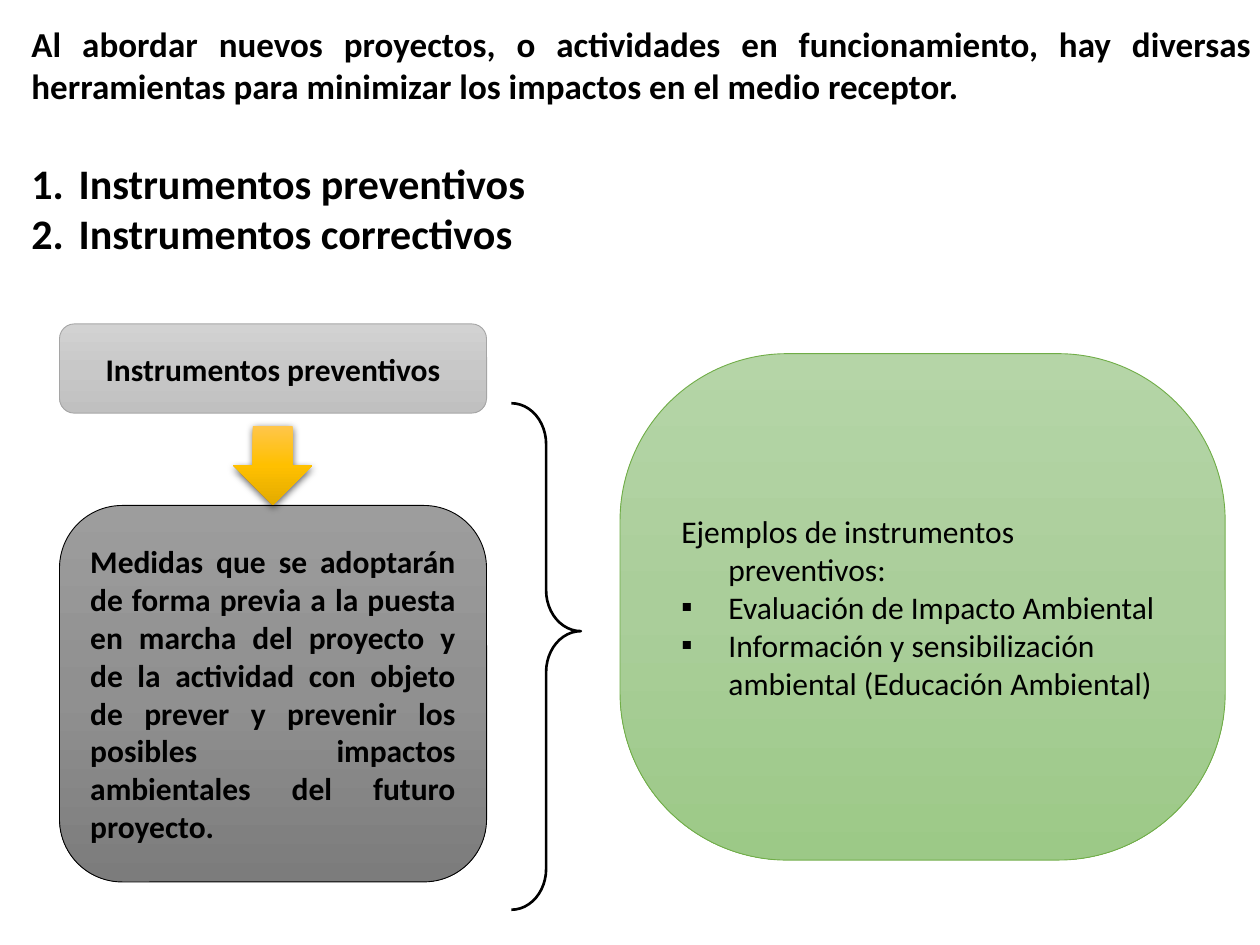
from copy import deepcopy
from dataclasses import dataclass

from lxml import etree
from pptx import Presentation
from pptx.dml.color import RGBColor
from pptx.enum.shapes import MSO_SHAPE
from pptx.enum.text import MSO_ANCHOR, MSO_AUTO_SIZE, PP_ALIGN
from pptx.oxml.ns import qn
from pptx.util import Cm, Pt

ROUNDED, ARROW, BRACE = MSO_SHAPE.ROUNDED_RECTANGLE, MSO_SHAPE.DOWN_ARROW, MSO_SHAPE.RIGHT_BRACE
TOP, MIDDLE = MSO_ANCHOR.TOP, MSO_ANCHOR.MIDDLE
LEFT, CENTER, JUSTIFY = PP_ALIGN.LEFT, PP_ALIGN.CENTER, PP_ALIGN.JUSTIFY
FONT, BLACK = "Calibri", "000000"
INDENT = Cm(0.95)
NUMBER = ("a:buAutoNum", {"type": "arabicPeriod"})
SQUARE = ("a:buChar", {"char": "▪"})


@dataclass
class Block:
    """A preset shape with its place in centimetres."""
    kind: int
    left: float
    top: float
    width: float
    height: float
    stops: tuple = ()
    line: str = ""
    weight: float = 0.5
    adjustments: tuple = ()


def rgb(value: str) -> RGBColor:
    return RGBColor.from_string(value)


def place(sp, left: float, top: float, width: float, height: float) -> None:
    sp.left, sp.top, sp.width, sp.height = Cm(left), Cm(top), Cm(width), Cm(height)


def write(sp, text: str, size: int, align, anchor, bold: bool = True) -> None:
    tf = sp.text_frame
    tf.text = text
    tf.word_wrap = True
    tf.auto_size = MSO_AUTO_SIZE.NONE
    tf.vertical_anchor = anchor
    for p in tf.paragraphs:
        p.alignment = align
        p.space_before = Pt(0)
        for r in p.runs:
            r.font.name, r.font.size, r.font.bold = FONT, Pt(size), bold
            r.font.color.rgb = rgb(BLACK)


def hang(p, bullet: tuple = ()) -> None:
    """Give a paragraph a hanging indent and, if asked, a bullet."""
    pPr = p._p.get_or_add_pPr()
    pPr.set("marL", str(INDENT))
    pPr.set("indent", str(-INDENT))
    if bullet:
        tag, attributes = bullet
        etree.SubElement(pPr, qn("a:buFont"), typeface=FONT)
        etree.SubElement(pPr, qn(tag), attributes)


def fill_gradient(sp, colors: tuple) -> None:
    """Evenly spaced stops running from top to bottom."""
    sp.fill.gradient()
    sp.fill.gradient_angle = 270
    gs_list = sp._element.spPr.find(qn("a:gradFill")).find(qn("a:gsLst"))
    while len(gs_list) < len(colors):
        gs_list.append(deepcopy(gs_list[0]))
    for i, (stop, color) in enumerate(zip(sp.fill.gradient_stops, colors)):
        stop.position = i / (len(colors) - 1)
        stop.color.rgb = rgb(color)


def add_block(s, b: Block):
    sp = s.shapes.add_shape(b.kind, Cm(b.left), Cm(b.top), Cm(b.width), Cm(b.height))
    for i, value in enumerate(b.adjustments):
        sp.adjustments[i] = value
    if b.stops:
        fill_gradient(sp, b.stops)
    else:
        sp.fill.background()
    if b.line:
        sp.line.color.rgb = rgb(b.line)
        sp.line.width = Pt(b.weight)
    else:
        sp.line.fill.background()
    sp.shadow.inherit = False
    return sp


def add_shadow(sp) -> None:
    effects = sp._element.spPr.find(qn("a:effectLst"))
    shadow = etree.SubElement(effects, qn("a:outerShdw"), blurRad=str(Pt(4.5)),
                              dist=str(Pt(1.5)), dir="5400000", rotWithShape="0")
    color = etree.SubElement(shadow, qn("a:srgbClr"), val=BLACK)
    etree.SubElement(color, qn("a:alpha"), val="63000")


HEADING = Block(ROUNDED, 1.2, 6.53, 8.61, 1.8, ("D2D2D2", "C8C8C8", "C0C0C0"), "A5A5A5")
DEFINITION = Block(ROUNDED, 1.2, 10.19, 8.61, 7.59, ("9D9D9D", "909090", "7C7C7C"), BLACK)
EXAMPLES = Block(ROUNDED, 12.5, 7.13, 12.2, 10.21, ("B5D5A7", "AACE9A", "9CC987"), "70AD47",
                 adjustments=(0.33,))
DOWN = Block(ARROW, 4.7, 8.58, 1.6, 1.6, ("FFC64B", "FFC000", "E3AB00"))
BRACKET = Block(BRACE, 10.31, 8.13, 1.4, 10.21, line=BLACK, weight=1.5,
                adjustments=(0.59, 0.45))


def main() -> None:
    prs = Presentation()
    prs.slide_width, prs.slide_height = Cm(25.4), Cm(19.05)
    s = prs.slides.add_slide(prs.slide_layouts[1])

    # Introduction and numbered list
    title, body = s.shapes.title, s.placeholders[1]
    place(title, 0.38, 0.33, 25.1, 2)
    write(title, "Al abordar nuevos proyectos, o actividades en funcionamiento, hay diversas "
          "herramientas para minimizar los impactos en el medio receptor.", 20, JUSTIFY, TOP)
    place(body, 0.38, 3.04, 25.1, 2.4)
    write(body, "Instrumentos preventivos\nInstrumentos correctivos", 24, JUSTIFY, TOP)
    for p in body.text_frame.paragraphs:
        hang(p, NUMBER)

    # Definition column
    write(add_block(s, HEADING), "Instrumentos preventivos", 18, CENTER, MIDDLE)
    write(add_block(s, DEFINITION), "Medidas que se adoptarán de forma previa a la puesta en "
          "marcha del proyecto y de la actividad con objeto de prever y prevenir los posibles "
          "impactos ambientales del futuro proyecto.", 18, JUSTIFY, MIDDLE)

    # Examples
    sp = add_block(s, EXAMPLES)
    write(sp, "Ejemplos de instrumentos preventivos:\nEvaluación de Impacto Ambiental\n"
          "Información y sensibilización ambiental (Educación Ambiental)",
          18, LEFT, MIDDLE, bold=False)
    for i, p in enumerate(sp.text_frame.paragraphs):
        hang(p, SQUARE if i else ())

    # Arrow and brace
    add_shadow(add_block(s, DOWN))
    add_block(s, BRACKET)

    prs.save("out.pptx")


if __name__ == "__main__":
    main()
